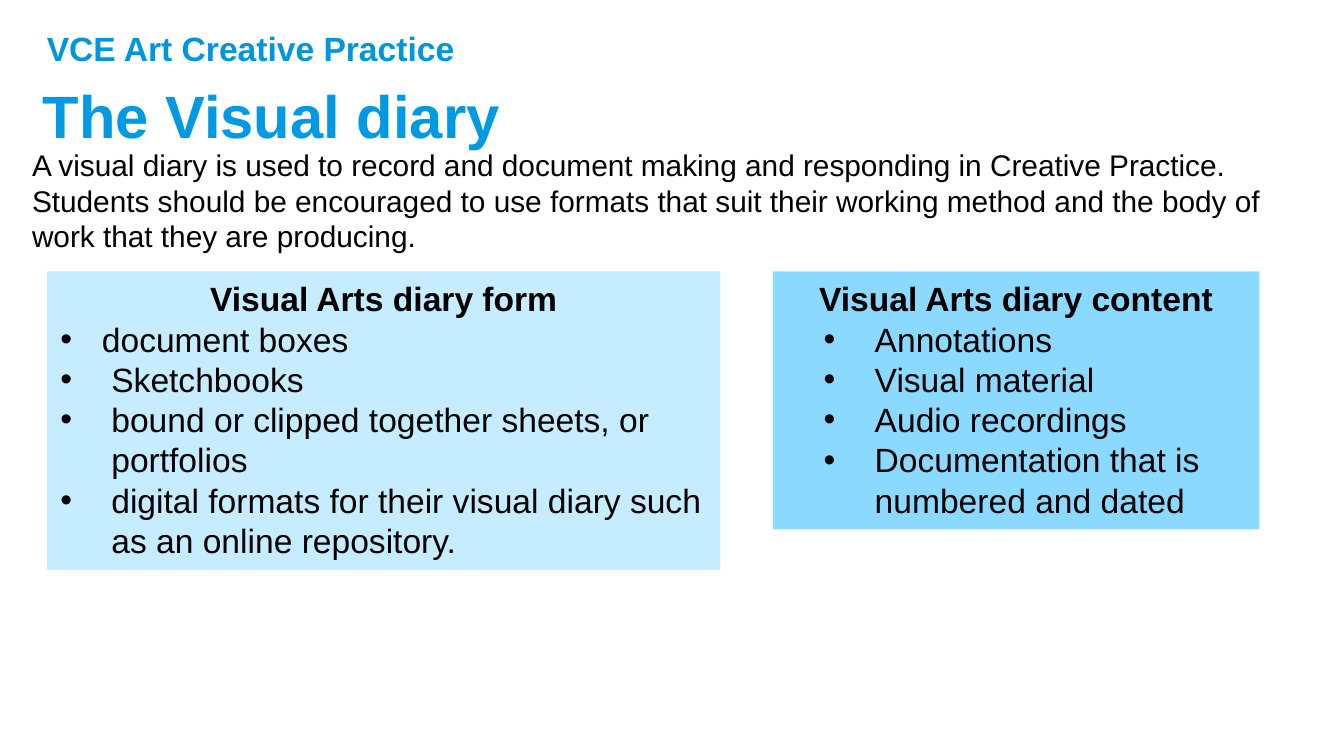
from pptx import Presentation
from pptx.dml.color import RGBColor
from pptx.enum.shapes import MSO_SHAPE
from pptx.enum.text import MSO_ANCHOR, PP_ALIGN
from pptx.oxml.ns import qn
from pptx.util import Inches, Pt

RECTANGLE = MSO_SHAPE.RECTANGLE
TOP, MIDDLE = MSO_ANCHOR.TOP, MSO_ANCHOR.MIDDLE
LEFT, CENTER = PP_ALIGN.LEFT, PP_ALIGN.CENTER

FONT = "Arial"
BLACK = "000000"
HANGING = 0.38
PANEL_TOP = 2.02

HEADINGS = [
    ("The Visual diary", (0.22, 0.38, 9.53, 0.94), 32, "0099E3", True, MIDDLE),
    ("A visual diary is used to record and document making and responding in "
     "Creative Practice. Students should be encouraged to use formats that suit "
     "their working method and the body of work that they are producing.",
     (0.14, 1.04, 9.5, 1.18), 16, BLACK, False, TOP),
    ("VCE Art Creative Practice", (0.25, 0.16, 5, 0.4), 18, "0096DF", True, TOP),
]

PANELS = [
    ("Visual Arts diary form", (0.35, 5.01, 2.22), "C6ECFF", [
        ("document boxes", 0.31, 0.31),
        ("Sketchbooks", HANGING, HANGING),
        ("bound or clipped together sheets, or portfolios", HANGING, HANGING),
        ("digital formats for their visual diary such as an online repository.",
         HANGING, HANGING),
    ]),
    ("Visual Arts diary content", (5.75, 3.62, 1.92), "8CD9FF", [
        (item, 0.66, HANGING) for item in (
            "Annotations", "Visual material", "Audio recordings",
            "Documentation that is numbered and dated")
    ]),
]


def color(value):
    return RGBColor.from_string(value)


def write(paragraph, text, size, ink=BLACK, bold=False, align=LEFT):
    paragraph.alignment = align
    run = paragraph.add_run()
    run.text = text
    run.font.name, run.font.size, run.font.bold = FONT, Pt(size), bold
    run.font.color.rgb = color(ink)


def add_bullet(paragraph, margin, hanging):
    properties = paragraph._p.get_or_add_pPr()
    properties.set("marL", str(Inches(margin)))
    properties.set("indent", str(-Inches(hanging)))
    for tag, name, value in (("a:buFont", "typeface", FONT), ("a:buChar", "char", "•")):
        element = properties.makeelement(qn(tag), {name: value})
        properties.append(element)


def add_heading(slide, text, place, size, ink, bold, anchor):
    frame = slide.shapes.add_textbox(*map(Inches, place)).text_frame
    frame.word_wrap = True
    frame.vertical_anchor = anchor
    write(frame.paragraphs[0], text, size, ink, bold)


def add_panel(slide, heading, place, fill, items):
    left, width, height = place
    panel = slide.shapes.add_shape(
        RECTANGLE, *map(Inches, (left, PANEL_TOP, width, height)))
    panel.shadow.inherit = False
    panel.fill.solid()
    panel.fill.fore_color.rgb = color(fill)
    panel.line.fill.background()
    frame = panel.text_frame
    frame.word_wrap = True
    frame.vertical_anchor = TOP
    write(frame.paragraphs[0], heading, 18, bold=True, align=CENTER)
    for text, margin, hanging in items:
        paragraph = frame.add_paragraph()
        add_bullet(paragraph, margin, hanging)
        write(paragraph, text, 18)


def main():
    """Build the visual diary slide."""
    deck = Presentation()
    deck.slide_width = Inches(10)
    deck.slide_height = deck.slide_width * 9 // 16
    slide = deck.slides.add_slide(deck.slide_layouts[6])
    for heading in HEADINGS:
        add_heading(slide, *heading)
    for panel in PANELS:
        add_panel(slide, *panel)
    deck.save("out.pptx")


if __name__ == "__main__":
    main()
